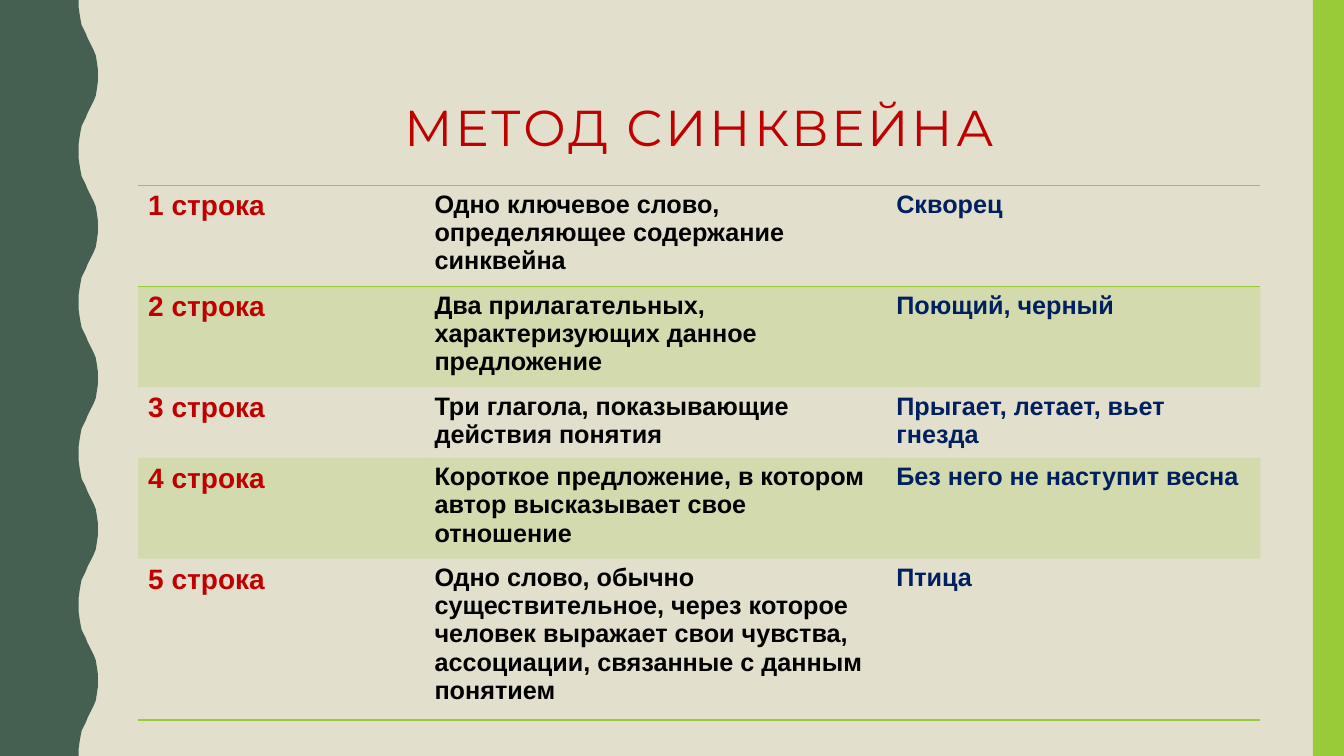
"""Builds the cinquain method slide: wavy side band, title and a five-row table."""
from lxml import etree
from pptx import Presentation
from pptx.dml.color import RGBColor
from pptx.enum import shapes, text
from pptx.oxml import ns
from pptx.util import Inches, Pt

SAND = RGBColor(0xE2, 0xDF, 0xCC)
FOREST = RGBColor(0x45, 0x5F, 0x51)
LIME = RGBColor(0x99, 0xCB, 0x38)
RED = RGBColor(0xC0, 0x00, 0x00)
BLACK = RGBColor(0x00, 0x00, 0x00)
NAVY = RGBColor(0x00, 0x20, 0x60)
NO_STYLE = "{2D5ABB26-0587-4C30-8999-92F81FD0307C}"

ROWS = [
    ("1 строка", "Одно ключевое слово, определяющее содержание синквейна", "Скворец"),
    ("2 строка", "Два прилагательных, характеризующих данное предложение", "Поющий, черный"),
    ("3 строка", "Три глагола, показывающие действия понятия", "Прыгает, летает, вьет гнезда"),
    ("4 строка", "Короткое предложение, в котором автор высказывает свое отношение",
     "Без него не наступит весна"),
    ("5 строка", "Одно слово, обычно существительное, через которое человек выражает "
     "свои чувства, ассоциации, связанные с данным понятием", "Птица"),
]
COLUMNS = [(2.84, 20, RED), (4.58, 18, BLACK), (3.71, 18, NAVY)]
ROW_HEIGHTS = [0.94, 0.94, 0.66, 0.94, 1.5]
BORDERS = {0: ("a:lnT", "a:lnB"), 4: ("a:lnB",)}


def add_run(p, words, font, size, color, bold=False):
    r = p.add_run()
    r.text = words
    r.font.name, r.font.size, r.font.bold = font, Pt(size), bold
    r.font.color.rgb = color
    return r


def paint(sp, color):
    sp.shadow.inherit = False
    sp.fill.solid()
    sp.fill.fore_color.rgb = color
    sp.line.fill.background()


prs = Presentation()
prs.slide_width, prs.slide_height = Inches(13.33), Inches(7.5)
s = prs.slides.add_slide(prs.slide_layouts[6])
s.background.fill.solid()
s.background.fill.fore_color.rgb = SAND

rise = [(0.78, 0), (0.78, 0.07), (0.79, 0.14), (0.8, 0.2), (0.81, 0.25), (0.83, 0.29),
        (0.85, 0.33), (0.87, 0.38), (0.89, 0.42), (0.91, 0.46), (0.93, 0.5),
        (0.95, 0.55), (0.96, 0.61), (0.97, 0.68), (0.97, 0.75)]
wave = rise + [(x, 1.5 - y) for x, y in rise[-2::-1]]
edge = [(Inches(x), Inches(y + 1.5 * i)) for i in range(5) for x, y in wave]
builder = s.shapes.build_freeform(0, 0, scale=1.0)
builder.add_line_segments(edge + [(0, Inches(7.5))], close=True)
paint(builder.convert_to_shape(), FOREST)

stripe = s.shapes.add_shape(shapes.MSO_SHAPE.RECTANGLE, Inches(13.02), 0,
                            Inches(0.31), Inches(7.5))
paint(stripe, LIME)

title = s.shapes.add_textbox(Inches(1.37), Inches(0.42), Inches(11.13), Inches(1.63))
tf = title.text_frame
tf.word_wrap = True
tf.vertical_anchor = text.MSO_ANCHOR.TOP
tf.margin_top = Inches(0.6)
p = tf.paragraphs[0]
p.alignment = text.PP_ALIGN.CENTER
p.line_spacing = 0.9
r = add_run(p, "МЕТОД СИНКВЕЙНА", "Montserrat", 36, RED)
r.font._element.set("spc", "200")

frame = s.shapes.add_table(len(ROWS), len(COLUMNS), Inches(1.37), Inches(1.84),
                           Inches(11.13), Inches(sum(ROW_HEIGHTS)))
table = frame.table
table.first_row = table.horz_banding = False
table._tbl.tblPr.find(ns.qn("a:tableStyleId")).text = NO_STYLE
for column, (width, _, _) in zip(table.columns, COLUMNS):
    column.width = Inches(width)
for i, (words, height) in enumerate(zip(ROWS, ROW_HEIGHTS)):
    table.rows[i].height = Inches(height)
    for j, (_, size, color) in enumerate(COLUMNS):
        cell = table.cell(i, j)
        add_run(cell.text_frame.paragraphs[0], words[j], "Arial", size, color, bold=True)
        tcPr = cell._tc.get_or_add_tcPr()
        for side in BORDERS.get(i, ()):
            ln = etree.SubElement(tcPr, ns.qn(side), w=str(Pt(1)))
            fill = etree.SubElement(ln, ns.qn("a:solidFill"))
            etree.SubElement(fill, ns.qn("a:srgbClr"), val=str(LIME))
        if i % 2:
            cell.fill.solid()
            cell.fill.fore_color.rgb = LIME
            tint = tcPr.find(".//" + ns.qn("a:srgbClr"))
            etree.SubElement(tint, ns.qn("a:alpha"), val="20000")
        else:
            cell.fill.background()

prs.save("out.pptx")
